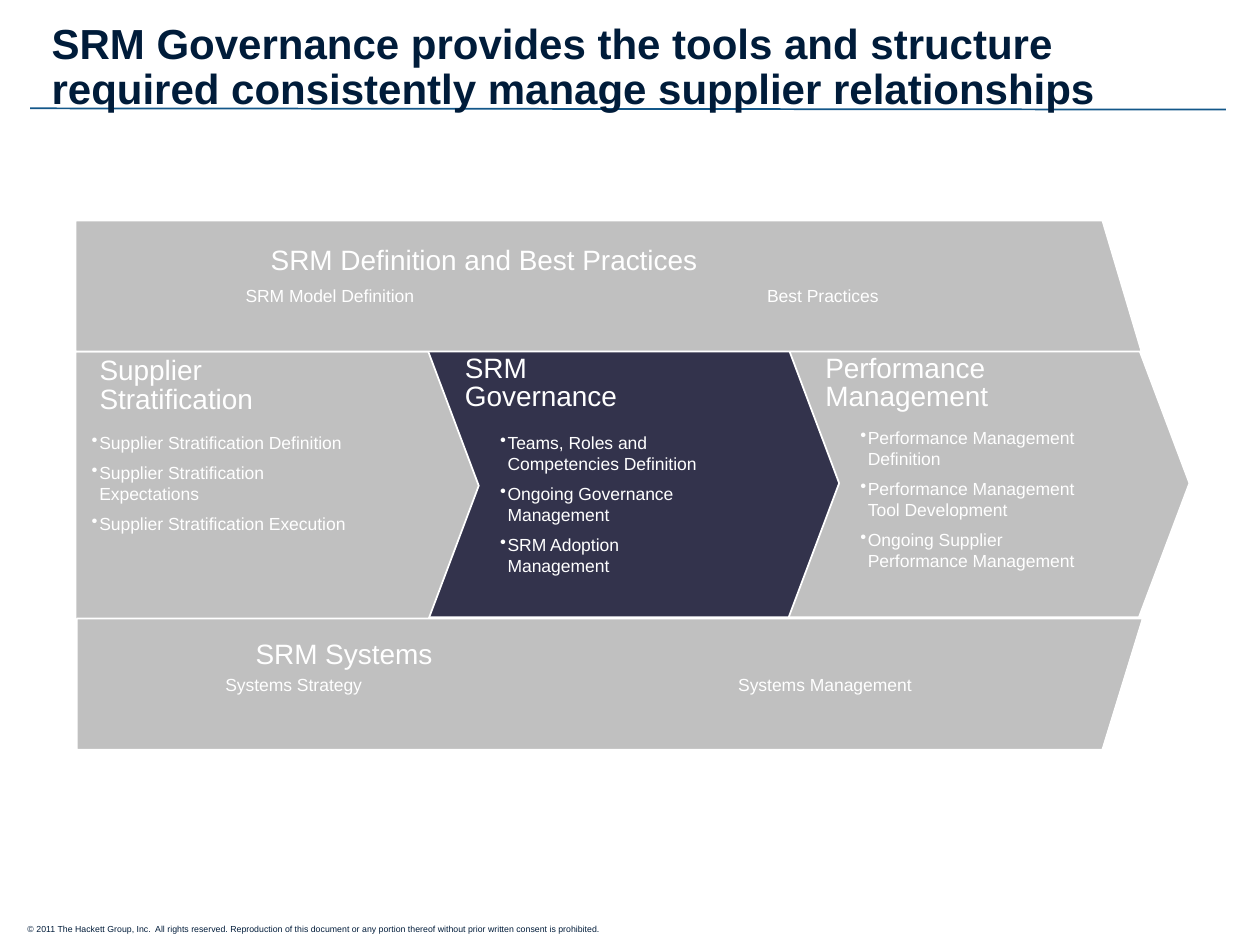
import pptx
import pptx.util
import pptx.dml.color
import pptx.enum.shapes
import pptx.enum.text
import lxml.etree

# Grid of 100 columns by 75 rows
WIDE, HIGH = pptx.util.Inches(10), pptx.util.Inches(7.5)
COL, ROW = WIDE // 100, HIGH // 75
NAVY, BLUE, DARK, GRAY, WHITE = "001C3A", "135789", "33334C", "C0C0C0", "FFFFFF"
NS = "http://schemas.openxmlformats.org/drawingml/2006/main"

# Stage: left, top, width, fill, heading indent, heading lines
STAGES = [
    (62.4, 27.7, 32, GRAY, 3.1, ["Performance", "Management"]),
    (33.8, 27.7, 32.8, DARK, 3.1, ["SRM", "Governance"]),
    (6, 27.9, 32, GRAY, 1.9, ["Supplier", "Stratification"]),
]
# Bullets: left, top, width, height, items
LISTS = [
    (6.3, 33.8, 22.6, 9.3, ["Supplier Stratification Definition",
                            "Supplier Stratification Expectations",
                            "Supplier Stratification Execution"]),
    (38.7, 33.8, 19.2, 17.7, ["Teams, Roles and Competencies Definition",
                              "Ongoing Governance Management",
                              "SRM Adoption Management"]),
    (67.3, 33.4, 19, 12.7, ["Performance Management Definition",
                            "Performance Management Tool Development",
                            "Ongoing Supplier Performance Management"]),
]
# Labels: left, top, width, height, size, text
LABELS = [
    (20.5, 18.8, 55.2, 3.7, 16, "SRM Definition and Best Practices"),
    (18.5, 22.1, 18.2, 2.7, 10, "SRM Model Definition"),
    (59.9, 22.1, 17.6, 2.7, 10, "Best Practices"),
    (19.3, 50, 58.7, 3.7, 16, "SRM Systems"),
    (16.9, 53, 21.4, 2.7, 10, "Systems Strategy"),
    (57.6, 53, 24.1, 2.7, 10, "Systems Management"),
]


def rgb(code):
    return pptx.dml.color.RGBColor.from_string(code)


def place(left, top, width, height):
    return [round(n) for n in (left * COL, top * ROW, width * COL, height * ROW)]


def write(shape, lines, size=10, color=WHITE, bold=False, lead=1.0,
          indent=0, hang=0, gap=0, bullet=None, pad=None, anchor="TOP"):
    """Fill a shape with formatted paragraphs."""
    frame = shape.text_frame
    frame.word_wrap = True
    frame.vertical_anchor = getattr(pptx.enum.text.MSO_ANCHOR, anchor)
    if pad:
        (frame.margin_left, frame.margin_top,
         frame.margin_right, frame.margin_bottom) = [round(n * COL) for n in pad]
    for i, line in enumerate(lines):
        para = frame.add_paragraph() if i else frame.paragraphs[0]
        para.text = line
        para.alignment = pptx.enum.text.PP_ALIGN.LEFT
        para.line_spacing = lead
        para.space_before = pptx.util.Pt(gap if i else 0)
        props = para._p.get_or_add_pPr()
        props.set("marL", str(round(indent * COL)))
        props.set("indent", str(round(-hang * COL)))
        if bullet:
            lxml.etree.SubElement(props, f"{{{NS}}}buChar").set("char", bullet)
        font = para.font
        font.name, font.size, font.bold = "Arial", pptx.util.Pt(size), bold
        font.color.rgb = rgb(color)


def label(slide, spot, lines, **form):
    write(slide.shapes.add_textbox(*place(*spot)), lines, **form)


def paint(shape, fill):
    shape.shadow.inherit = False
    shape.fill.solid()
    shape.fill.fore_color.rgb = rgb(fill)
    shape.line.color.rgb = rgb(WHITE)
    shape.line.width = pptx.util.Pt(1)


def stage(slide, left, top, width, fill, indent, lines):
    kind = pptx.enum.shapes.MSO_SHAPE.PENTAGON
    shape = slide.shapes.add_shape(kind, *place(left, top, width, 21.3))
    shape.adjustments[0] = 0.188
    paint(shape, fill)
    write(shape, lines, size=16, lead=0.85, indent=indent, pad=(0, 0.5, 2, 0.5))


def banner(slide, left, inner, outer):
    """Band whose long edge touches the stages at row inner."""
    spots = [(left, outer), (87.5, outer), (left + 84.6, inner)]
    pen = slide.shapes.build_freeform(round(left * COL), round(inner * ROW))
    pen.add_line_segments([(round(x * COL), round(y * ROW)) for x, y in spots], close=True)
    paint(pen.convert_to_shape(), GRAY)


def rule(slide):
    kind = pptx.enum.shapes.MSO_CONNECTOR.STRAIGHT
    line = slide.shapes.add_connector(kind, *place(2.4, 8.6, 97.3, 8.7))
    line.line.color.rgb = rgb(BLUE)
    line.line.width = pptx.util.Pt(1)
    lxml.etree.SubElement(line._element.spPr, f"{{{NS}}}effectLst")


def head(slide, text):
    title = slide.shapes.title
    title.left, title.top, title.width, title.height = place(4.1, -0.4, 90, 11.7)
    write(title, [text], size=24, color=NAVY, bold=True, lead=0.9,
          pad=(0, 0, 0, 0), anchor="MIDDLE")
    slide.shapes._spTree.append(title._element)  # title sits above the rule


def main():
    deck = pptx.Presentation()
    deck.slide_width, deck.slide_height = WIDE, HIGH
    slide = deck.slides.add_slide(deck.slide_layouts[5])

    # Footer, rule and title
    label(slide, (1.2, 72.8, 61.4, 1.8),
          ["© 2011 The Hackett Group, Inc.  All rights reserved. Reproduction of this "
           "document or any portion thereof without prior written consent is prohibited."],
          size=5, color=NAVY)
    rule(slide)
    head(slide, "SRM Governance provides the tools and structure required "
                "consistently manage supplier relationships")

    # Stages, right to left so that each overlaps the next
    for item in STAGES:
        stage(slide, *item)
    banner(slide, 6, 27.9, 17.5)
    banner(slide, 6.1, 49.1, 59.5)

    # Text on top
    for *spot, size, text in LABELS:
        label(slide, spot, [text], size=size)
    for *spot, items in LISTS:
        label(slide, spot, items, indent=0.6, hang=0.6, gap=5, bullet="•")

    deck.save("out.pptx")


if __name__ == "__main__":
    main()
